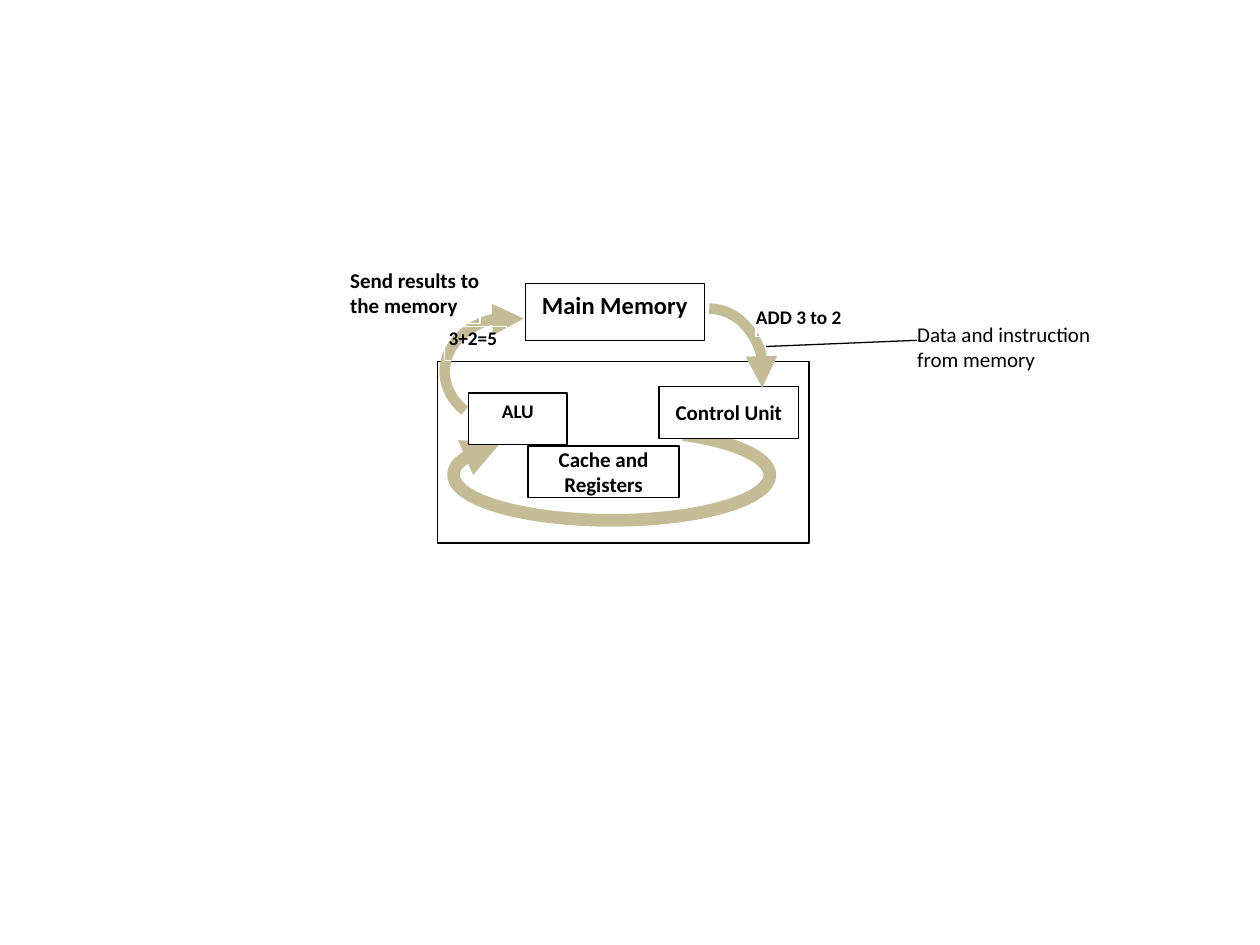
from lxml import etree
from pptx import Presentation
from pptx.dml.color import RGBColor
from pptx.enum.shapes import MSO_CONNECTOR, MSO_SHAPE
from pptx.enum.text import MSO_ANCHOR, PP_ALIGN
from pptx.oxml.ns import qn
from pptx.util import Inches, Pt

BLACK, WHITE, TAN = "000000", "FFFFFF", "C4BC96"
color = RGBColor.from_string

presentation = Presentation()
presentation.slide_width, presentation.slide_height = Inches(10), Inches(7.5)
slide = presentation.slides.add_slide(presentation.slide_layouts[6])


def add_box(bounds, text="", size=12, insets=(0, 0, 0, 0), label=False, bold=True):
    """Add a bordered unit, or an unfilled label with a white outline."""
    shape = slide.shapes.add_shape(MSO_SHAPE.RECTANGLE, *map(Inches, bounds))
    shape.shadow.inherit = False
    if label:
        shape.fill.background()
    else:
        shape.fill.solid()
        shape.fill.fore_color.rgb = color(WHITE)
    shape.line.color.rgb = color(WHITE if label else BLACK)
    shape.line.width = Pt(0.75)
    if not text:
        return
    frame = shape.text_frame
    frame.word_wrap = True
    frame.vertical_anchor = MSO_ANCHOR.TOP
    (frame.margin_left, frame.margin_top,
     frame.margin_right, frame.margin_bottom) = map(Inches, insets)
    paragraph = frame.paragraphs[0]
    paragraph.text = text
    paragraph.alignment = PP_ALIGN.LEFT if label else PP_ALIGN.CENTER
    paragraph.space_after = Pt(10)
    paragraph.font.name = "Calibri"
    paragraph.font.size = Pt(size)
    paragraph.font.bold = bold
    paragraph.font.color.rgb = color(BLACK)


def add_arc_arrow(bounds, start, end, width):
    """Add a clockwise arc between two angles in degrees, with an arrowhead."""
    shape = slide.shapes.add_shape(MSO_SHAPE.ARC, *map(Inches, bounds))
    shape.shadow.inherit = False
    shape.fill.background()
    # Angles are stored in 60000ths of a degree, adjustments in 100000ths
    shape.adjustments[0], shape.adjustments[1] = start * 0.6, end * 0.6
    shape.line.color.rgb = color(TAN)
    shape.line.width = Pt(width)
    line = shape.line._get_or_add_ln()
    etree.SubElement(line, qn("a:tailEnd"), type="triangle")


default_insets = (0.1, 0.05, 0.1, 0.05)

# Processor frame with cache, and the flow from control unit to ALU
add_box((3.47, 2.87, 2.95, 1.44))
add_box((4.19, 3.54, 1.2, 0.41), "Cache and Registers")
add_arc_arrow((3.6, 3.41, 2.51, 0.72), 330.5, 196.2, 7.25)
add_box((5.23, 3.07, 1.11, 0.41), "Control Unit", insets=(0, 0.1, 0, 0))

# Results flow from ALU to main memory
add_arc_arrow((3.53, 2.52, 1.04, 0.86), 139.3, 284.4, 6)
add_box((4.17, 2.25, 1.42, 0.45), "Main Memory", 14, default_insets)
add_box((3.53, 2.59, 0.49, 0.27), "3+2=5", 11, (0.03, 0, 0, 0), label=True)

# Callout line for the data and instruction flow
connector = slide.shapes.add_connector(
    MSO_CONNECTOR.STRAIGHT, Inches(6.08), Inches(2.75), Inches(7.3), Inches(2.7))
connector.line.color.rgb = color(BLACK)
connector.line.width = Pt(0.75)
etree.SubElement(connector._element.spPr, qn("a:effectLst"))
add_box((7.28, 2.55, 1.4, 0.53), "Data and instruction from memory",
        label=True, bold=False)
add_box((2.78, 2.12, 1.03, 0.45), "Send results to the memory", label=True)

# Instruction flow from main memory to control unit
add_arc_arrow((5.2, 2.45, 0.86, 1.04), 270, 14.4, 6)
add_box((6, 2.42, 0.7, 0.25), "ADD 3 to 2", 11, label=True)
add_box((3.72, 3.12, 0.78, 0.41), "ALU", 11, default_insets)

presentation.save("out.pptx")
